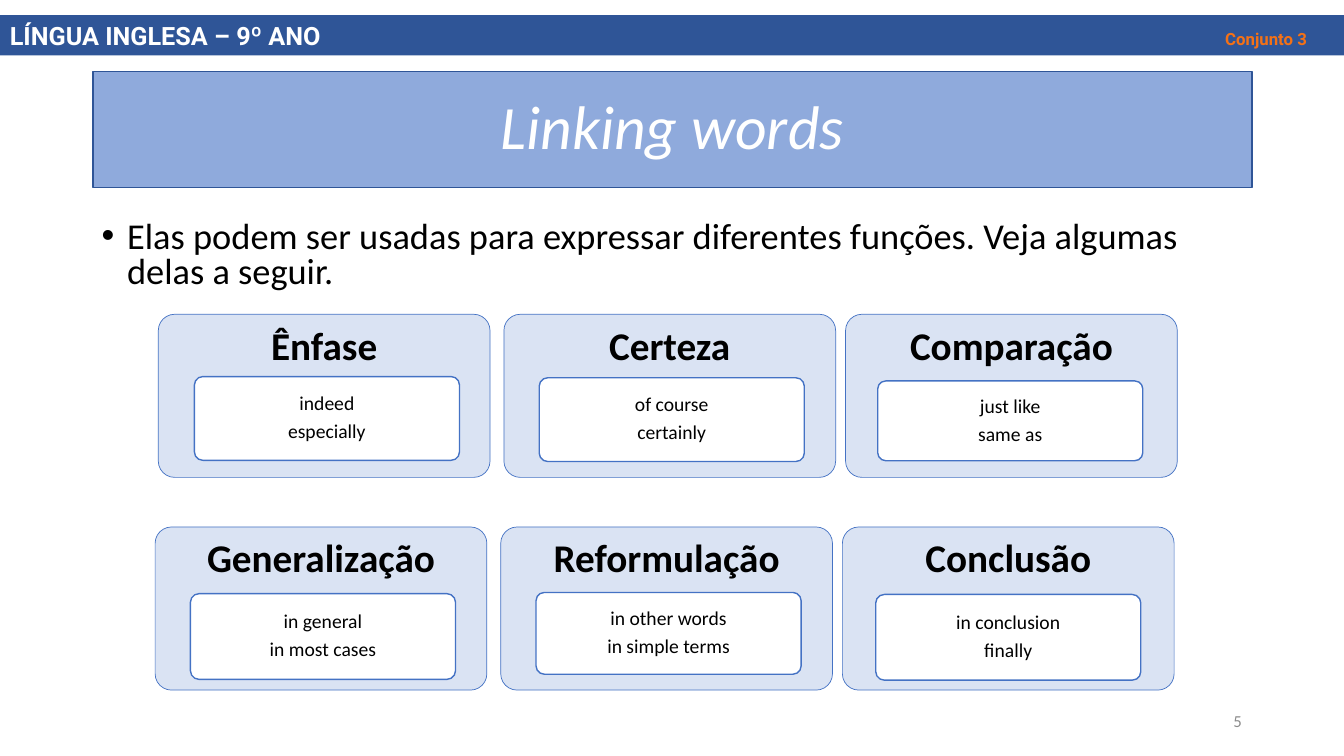
import pptx
import pptx.util
import pptx.dml.color
import pptx.enum.shapes
import pptx.enum.text
import pptx.oxml.ns
from lxml import etree

Cm, Pt = pptx.util.Cm, pptx.util.Pt
ALIGN = pptx.enum.text.PP_ALIGN
ANCHOR = pptx.enum.text.MSO_ANCHOR
SHAPE = pptx.enum.shapes.MSO_SHAPE

NAVY, ORANGE, BLUE = "2F5597", "F47116", "4472C4"
WHITE, BLACK = "FFFFFF", "000000"

# Each card: heading, linking words, then left, top and height of the word box
# relative to the card, in cm
CARD_ROWS = [
    (3.99, 7.92, [
        ("Ênfase", ["indeed", "especially"], 0.91, 1.57, 2.11),
        ("Certeza", ["of course", "certainly"], 0.89, 1.6, 2.11),
        ("Comparação", ["just like", "same as"], 0.81, 1.68, 2.01),
    ]),
    (3.91, 13.28, [
        ("Generalização", ["in general", "in most cases"], 0.89, 1.68, 2.16),
        ("Reformulação", ["in other words", "in simple terms"], 0.89, 1.65, 2.06),
        ("Conclusão", ["in conclusion", "finally"], 0.84, 1.7, 2.16),
    ]),
]
COLUMN_OFFSETS = [0, 8.71, 17.32]


def color(hex_code):
    return pptx.dml.color.RGBColor.from_string(hex_code)


def add_run(paragraph, text, size, ink=BLACK, font="Calibri", bold=False, italic=False):
    run = paragraph.add_run()
    run.text = text
    run.font.size = Pt(size)
    run.font.name = font
    run.font.bold = bold
    run.font.italic = italic
    run.font.color.rgb = color(ink)


def write(frame, lines, align=ALIGN.LEFT, anchor=ANCHOR.TOP, spacing=1.0,
          after=0, inset=None, **run_format):
    """Fill a text frame with one paragraph per line."""
    frame.word_wrap = True
    frame.auto_size = pptx.enum.text.MSO_AUTO_SIZE.NONE
    frame.vertical_anchor = anchor
    if inset is not None:
        frame.margin_left = frame.margin_right = Cm(inset)
        frame.margin_top = frame.margin_bottom = Cm(inset)
    for index, line in enumerate(lines):
        paragraph = frame.add_paragraph() if index else frame.paragraphs[0]
        paragraph.alignment = align
        paragraph.line_spacing = spacing
        paragraph.space_before = Pt(0)
        paragraph.space_after = Pt(after)
        add_run(paragraph, line, **run_format)


def place(shape, left, top, width, height):
    shape.left, shape.top = Cm(left), Cm(top)
    shape.width, shape.height = Cm(width), Cm(height)


def paint(shape, fill, line=None, line_width=1):
    shape.fill.solid()
    shape.fill.fore_color.rgb = color(fill)
    if line:
        shape.line.color.rgb = color(line)
        shape.line.width = Pt(line_width)
    else:
        shape.line.fill.background()


def add_panel(slide, kind, left, top, width, height, fill, **outline):
    panel = slide.shapes.add_shape(kind, Cm(left), Cm(top), Cm(width), Cm(height))
    panel.shadow.inherit = False
    if kind == SHAPE.ROUNDED_RECTANGLE:
        panel.adjustments[0] = 0.1
    paint(panel, fill, **outline)
    return panel


def add_ppr_child(parent, tag, **attributes):
    return etree.SubElement(parent, pptx.oxml.ns.qn(tag), **attributes)


def add_header(slide):
    header = add_panel(slide, SHAPE.RECTANGLE, 0, 0.38, 33.87, 1.02, NAVY)
    paragraph = header.text_frame.paragraphs[0]
    tabs = add_ppr_child(paragraph._p.get_or_add_pPr(), "a:tabLst")
    add_ppr_child(tabs, "a:tab", pos=str(Cm(32.69)), algn="r")
    write(header.text_frame, ["LÍNGUA INGLESA – 9º ANO\t"], anchor=ANCHOR.MIDDLE,
          size=18, ink=WHITE, font="Roboto", bold=True)
    add_run(paragraph, "Conjunto 3", size=12, ink=ORANGE, font="Roboto", bold=True)


def add_title(slide):
    title = slide.shapes.title
    place(title, 2.34, 1.8, 29.21, 2.92)
    paint(title, "8FAADC", line=NAVY)
    write(title.text_frame, ["Linking words"], align=ALIGN.CENTER, anchor=ANCHOR.MIDDLE,
          spacing=0.9, size=44, ink=WHITE, italic=True)


def add_introduction(slide):
    introduction = slide.placeholders[1]
    place(introduction, 2.31, 5.46, 29.11, 2.11)
    properties = introduction.text_frame.paragraphs[0]._p.get_or_add_pPr()
    properties.set("marL", str(Cm(0.64)))
    properties.set("indent", str(Cm(-0.64)))
    add_ppr_child(properties, "a:buFont", typeface="Arial")
    add_ppr_child(properties, "a:buChar", char="•")
    write(introduction.text_frame,
          ["Elas podem ser usadas para expressar diferentes funções. "
           "Veja algumas delas a seguir."], spacing=0.8, size=26)


def add_card(slide, left, top, heading, words, box_left, box_top, box_height):
    card = add_panel(slide, SHAPE.ROUNDED_RECTANGLE, left, top, 8.36, 4.11,
                     "DAE3F3", line=BLUE, line_width=0.5)
    write(card.text_frame, [heading], align=ALIGN.CENTER, spacing=0.9, inset=0.18,
          size=28, bold=True)
    word_box = add_panel(slide, SHAPE.ROUNDED_RECTANGLE, left + box_left, top + box_top,
                         6.68, box_height, WHITE, line=BLUE)
    write(word_box.text_frame, words, align=ALIGN.CENTER, anchor=ANCHOR.MIDDLE,
          spacing=0.9, after=4.9, inset=0.08, size=14)


def add_page_number(slide):
    number = slide.shapes.add_textbox(Cm(23.93), Cm(17.65), Cm(7.62), Cm(1.02))
    write(number.text_frame, ["5"], align=ALIGN.RIGHT, anchor=ANCHOR.MIDDLE,
          size=12, ink="8C8C8C")


def main():
    deck = pptx.Presentation()
    deck.slide_width, deck.slide_height = Cm(33.87), Cm(19.05)
    slide = deck.slides.add_slide(deck.slide_layouts[1])

    # Heading area
    add_title(slide)
    add_header(slide)
    add_introduction(slide)

    # Cards of linking words by function
    for row_left, row_top, cards in CARD_ROWS:
        for offset, card in zip(COLUMN_OFFSETS, cards):
            add_card(slide, row_left + offset, row_top, *card)

    # Footer
    add_page_number(slide)
    deck.save("out.pptx")


if __name__ == "__main__":
    main()
